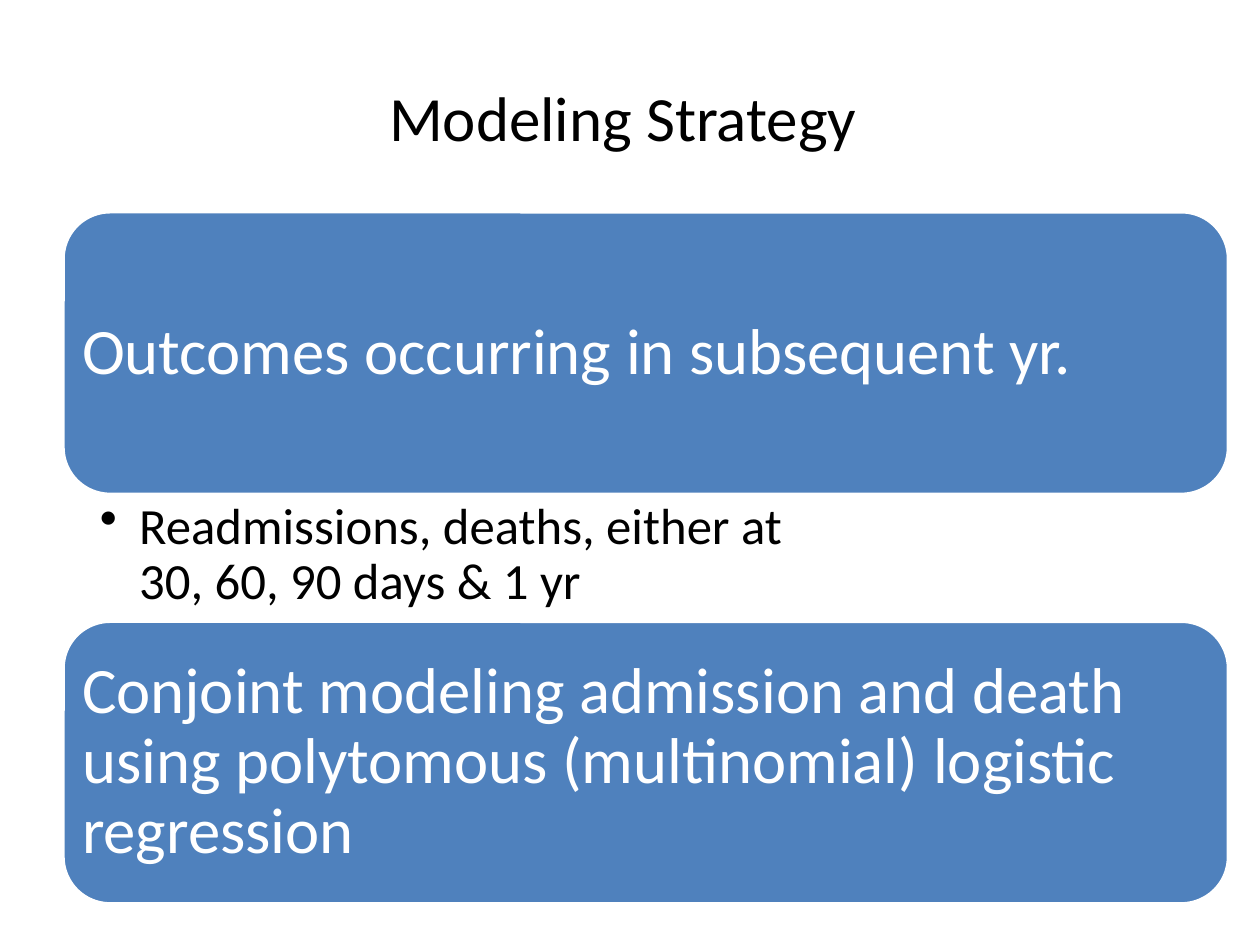
import pptx
import pptx.util
import pptx.dml.color
import pptx.enum.shapes
import pptx.enum.text
import lxml.etree

Pt = pptx.util.Pt
Anchor = pptx.enum.text.MSO_ANCHOR
Align = pptx.enum.text.PP_ALIGN
COLORS = {"card": "4F81BD", "white": "FFFFFF", "black": "000000"}
DRAWING = "{http://schemas.openxmlformats.org/drawingml/2006/main}"


def color(name):
    return pptx.dml.color.RGBColor.from_string(COLORS[name])


def write_text(shape, text, size, ink, anchor=Anchor.MIDDLE, align=Align.LEFT,
               inset=(7.2, 3.6), line_spacing=0.9, bullet_indent=None):
    frame = shape.text_frame
    frame.word_wrap = True
    frame.vertical_anchor = anchor
    frame.margin_left = frame.margin_right = Pt(inset[0])
    frame.margin_top = frame.margin_bottom = Pt(inset[1])
    paragraph = frame.paragraphs[0]
    paragraph.text = text
    paragraph.alignment = align
    paragraph.line_spacing = line_spacing
    if bullet_indent:
        properties = paragraph._p.get_or_add_pPr()
        properties.set("marL", str(Pt(bullet_indent)))
        properties.set("indent", str(-Pt(bullet_indent)))
        lxml.etree.SubElement(properties, DRAWING + "buChar", char="•")
    for run in paragraph.runs:
        run.font.name = "Calibri"
        run.font.size = Pt(size)
        run.font.color.rgb = color(ink)


presentation = pptx.Presentation()
presentation.slide_width, presentation.slide_height = Pt(720), Pt(540)
slide = presentation.slides.add_slide(presentation.slide_layouts[6])

# Title
title = slide.shapes.add_textbox(Pt(0), Pt(21.6), Pt(720), Pt(90))
write_text(title, "Modeling Strategy ", size=36, ink="black",
           align=Align.CENTER, line_spacing=1.0)

# Cards, with a gap for the bullet between them
left, width, card_height, gap = 36, 666, 161.5, 72.5
first_top = 121
cards = [
    "Outcomes occurring in subsequent yr.",
    "Conjoint modeling admission and death using polytomous "
    "(multinomial) logistic regression",
]
for index, text in enumerate(cards):
    top = first_top + index * (card_height + gap)
    card = slide.shapes.add_shape(
        pptx.enum.shapes.MSO_SHAPE.ROUNDED_RECTANGLE,
        Pt(left), Pt(top), Pt(width), Pt(card_height))
    card.shadow.inherit = False
    card.fill.solid()
    card.fill.fore_color.rgb = color("card")
    card.line.color.rgb = color("white")
    card.line.width = Pt(2)
    write_text(card, text, size=37, ink="white", inset=(3, 3))

# Bullet under the first card
detail = slide.shapes.add_textbox(
    Pt(left), Pt(first_top + card_height), Pt(width), Pt(gap))
write_text(detail, "Readmissions, deaths, either at \v30, 60, 90 days & 1 yr",
           size=29, ink="black", anchor=Anchor.TOP, inset=(21, 3.6),
           bullet_indent=22.5)

presentation.save("out.pptx")
